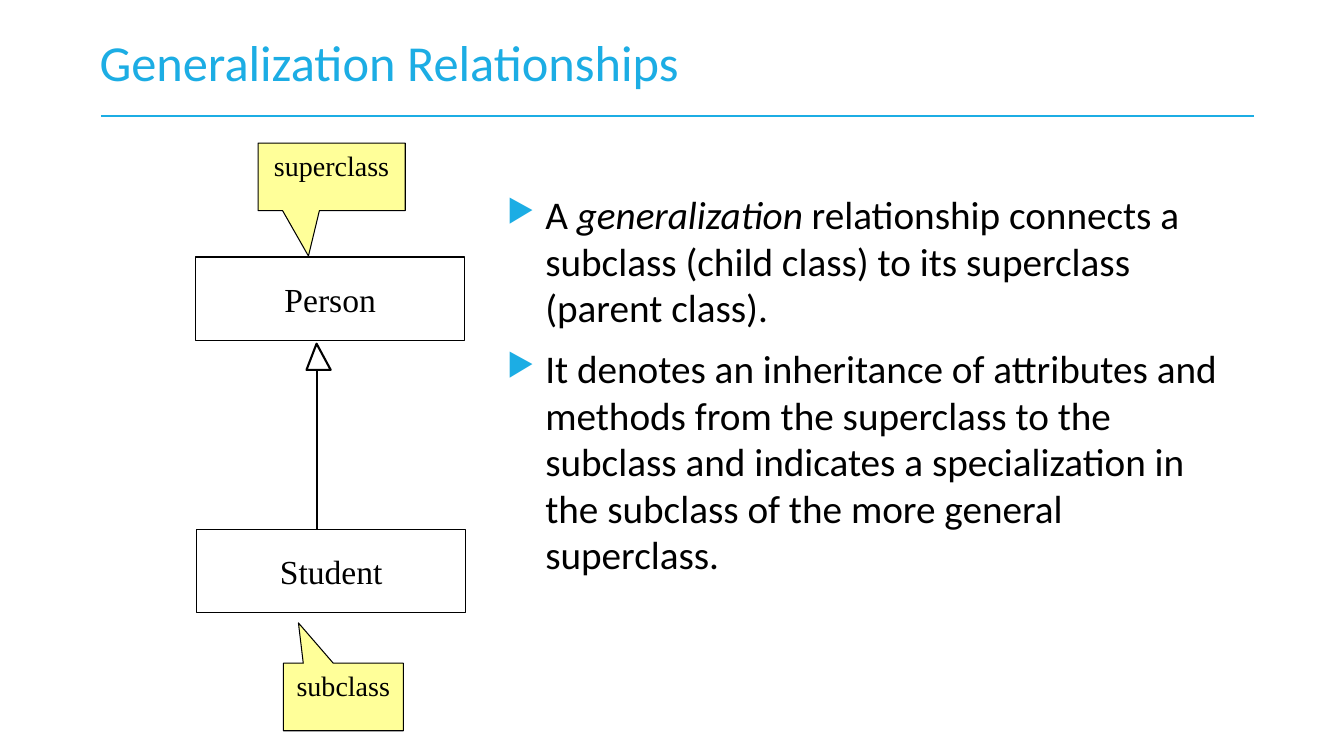
import pptx
import pptx.util
import pptx.dml.color
import pptx.enum.shapes
import pptx.enum.text
import pptx.oxml

Inches = pptx.util.Inches
Pt = pptx.util.Pt
SHAPE = pptx.enum.shapes.MSO_SHAPE
ANCHOR = pptx.enum.text.MSO_ANCHOR
ALIGN = pptx.enum.text.PP_ALIGN

COLORS = {"accent": "1CADE4", "ink": "000000", "paper": "FFFFFF", "note": "FFFF99"}
FONTS = {
    "title": {"name": "Calibri", "size": Pt(36)},
    "body": {"name": "Calibri", "size": Pt(28)},
    "class": {"name": "Times New Roman", "size": Pt(24)},
    "note": {"name": "Times New Roman", "size": Pt(20)},
}
POINTS = [
    [("A ", False), ("generalization", True),
     (" relationship connects a subclass (child class) to its superclass (parent class).", False)],
    [("It denotes an inheritance of attributes and methods from the superclass to the "
      "subclass and indicates a specialization in the subclass of the more general "
      "superclass.", False)],
]


def color(key):
    return pptx.dml.color.RGBColor.from_string(COLORS[key])


def add_run(para, text, font, ink="ink", italic=False):
    run = para.add_run()
    run.text = text
    for key, value in {**FONTS[font], "italic": italic}.items():
        setattr(run.font, key, value)
    run.font.color.rgb = color(ink)


def add_node(parent, node):
    xml = node.replace("/>", f' {pptx.oxml.ns.nsdecls("a")}/>', 1)
    if "</" in node:
        xml = node.replace(">", f' {pptx.oxml.ns.nsdecls("a")}>', 1)
    parent.append(pptx.oxml.parse_xml(xml))


def add_line(slide, start, end, ink, width):
    kind = pptx.enum.shapes.MSO_CONNECTOR.STRAIGHT
    line = slide.shapes.add_connector(kind, *map(Inches, start + end))
    line.line.color.rgb = color(ink)
    line.line.width = Pt(width)
    add_node(line._element.spPr, "<a:effectLst/>")


def paint(shape, fill, width):
    shape.shadow.inherit = False
    shape.fill.solid()
    shape.fill.fore_color.rgb = color(fill)
    shape.line.color.rgb = color("ink")
    shape.line.width = Pt(width)


def add_label(shape, text, font, anchor, wrap):
    frame = shape.text_frame
    for key, value in {"vertical_anchor": anchor, "word_wrap": wrap}.items():
        setattr(frame, key, value)
    para = frame.paragraphs[0]
    para.alignment = ALIGN.CENTER
    add_run(para, text, font)


def add_class(slide, box, text):
    shape = slide.shapes.add_shape(SHAPE.RECTANGLE, *map(Inches, box))
    paint(shape, "paper", 0.75)
    add_label(shape, text, "class", ANCHOR.MIDDLE, False)


def add_note(slide, box, text, tip):
    shape = slide.shapes.add_shape(SHAPE.RECTANGULAR_CALLOUT, *map(Inches, box))
    left, top, width, height = box
    shape.adjustments[0] = (tip[0] - left) / width - 0.5
    shape.adjustments[1] = (tip[1] - top) / height - 0.5
    paint(shape, "note", 0.75)
    add_label(shape, text, "note", ANCHOR.TOP, True)


def add_arrow(slide, x, top, end):
    base = top + 0.26
    add_line(slide, (x, base), (x, end), "ink", 1.5)
    build = slide.shapes.build_freeform(Inches(x), Inches(top), scale=1.0)
    corners = [(x - 0.1, base), (x + 0.14, base)]
    build.add_line_segments([(Inches(a), Inches(b)) for a, b in corners], close=True)
    paint(build.convert_to_shape(), "paper", 1.5)


def add_title(slide, box):
    frame = slide.shapes.add_textbox(*map(Inches, box)).text_frame
    frame.word_wrap = True
    frame.vertical_anchor = ANCHOR.MIDDLE
    add_run(frame.paragraphs[0], "Generalization Relationships", "title", "accent")
    left, top = box[:2]
    add_line(slide, (left + 0.11, top + 0.94), (left + 11.55, top + 0.94), "accent", 1)


def add_body(slide, box):
    frame = slide.shapes.add_textbox(*map(Inches, box)).text_frame
    frame.word_wrap = True
    for i, parts in enumerate(POINTS):
        para = frame.add_paragraph() if i else frame.paragraphs[0]
        para.space_before = Pt(10)
        para.line_spacing = 0.99
        props = para._p.get_or_add_pPr()
        props.set("marL", str(Inches(0.38)))
        props.set("indent", str(Inches(-0.38)))
        add_node(props, f'<a:buClr><a:srgbClr val="{COLORS["accent"]}"/></a:buClr>')
        add_node(props, '<a:buSzPct val="80000"/>')
        add_node(props, '<a:buChar char="▶"/>')
        for text, italic in parts:
            add_run(para, text, "body", italic=italic)


def add_diagram(slide, box):
    left, top, width = box
    tall = 0.83
    parent, child = top + 1.13, top + 3.83
    add_class(slide, (left, parent, width, tall), "Person")
    add_class(slide, (left + 0.01, child, width, tall), "Student")
    add_arrow(slide, left + 1.2, parent + tall + 0.03, child)
    add_note(slide, (left + 0.87, top + 5.16, 1.19, 0.67), "subclass",
             (left + 1.02, child + tall + 0.1))
    add_note(slide, (left + 0.62, top, 1.46, 0.67), "superclass",
             (left + 1.12, parent - 0.01))


def main():
    deck = pptx.Presentation()
    deck.slide_width = Inches(13.33)
    deck.slide_height = Inches(7.5)
    slide = deck.slides.add_slide(deck.slide_layouts[6])
    add_title(slide, (0.89, 0.21, 11.76, 0.79))
    add_body(slide, (4.93, 1.86, 7.48, 4.8))
    add_diagram(slide, (1.94, 1.42, 2.67))
    deck.save("out.pptx")


if __name__ == "__main__":
    main()
